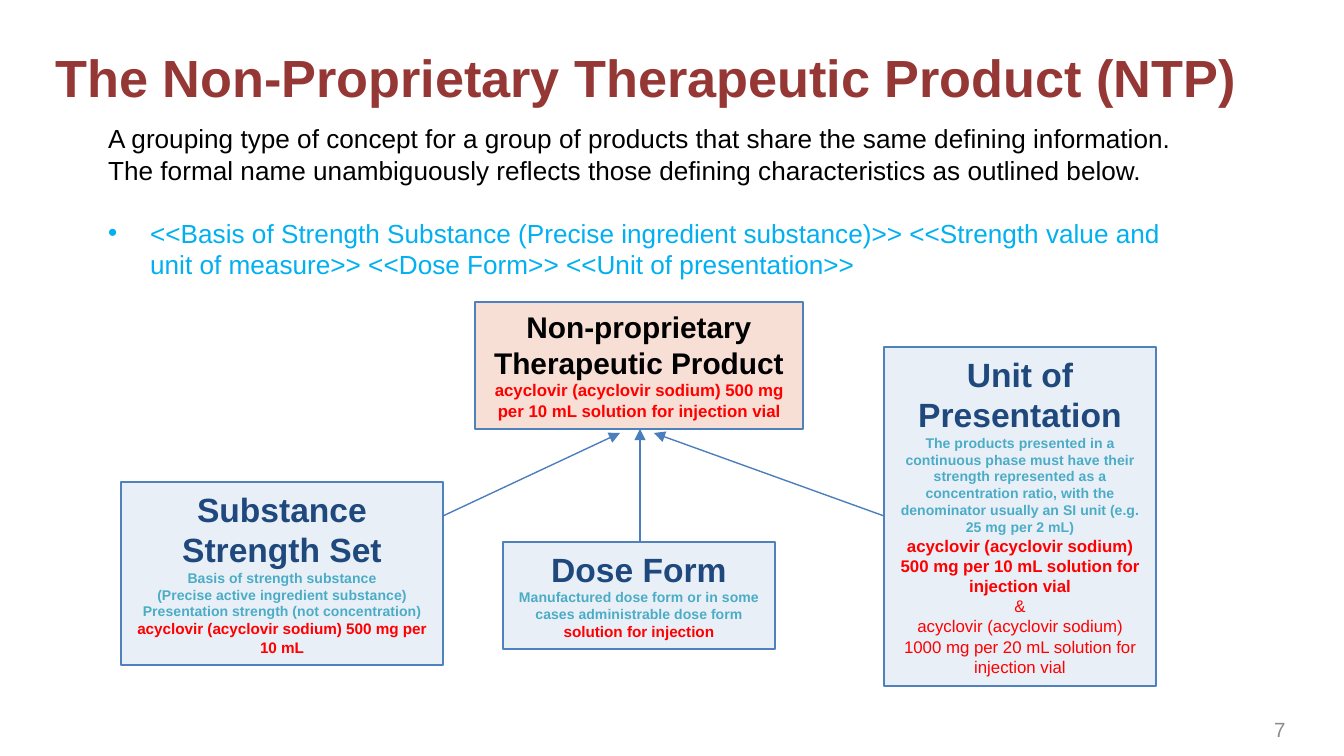
from lxml import etree
from pptx import Presentation
from pptx.dml.color import RGBColor
from pptx.enum.shapes import MSO_CONNECTOR as CONN, MSO_SHAPE as SHAPE
from pptx.enum.text import MSO_ANCHOR as ANCHOR, MSO_AUTO_SIZE as AUTO, PP_ALIGN as ALIGN
from pptx.oxml.ns import qn
from pptx.util import Emu, Pt

PX = 914400 / 134.4
BLACK = RGBColor(0x00, 0x00, 0x00)
MAROON = RGBColor(0x95, 0x37, 0x35)
GRAY = RGBColor(0x8C, 0x8C, 0x8C)
CYAN = RGBColor(0x00, 0xB0, 0xF0)
RED = RGBColor(0xFF, 0x00, 0x00)
NAVY = RGBColor(0x1F, 0x49, 0x7D)
TEAL = RGBColor(0x4B, 0xAC, 0xC6)
PEACH = RGBColor(0xE9, 0x98, 0x77)
PALE = RGBColor(0xB9, 0xCD, 0xE5)
EDGE = RGBColor(0x4F, 0x81, 0xBD)
ARROW = RGBColor(0x4B, 0x7E, 0xBC)


def px(*values):
    return [Emu(round(v * PX)) for v in values]


def write(tf, lines, align=ALIGN.LEFT):
    tf.word_wrap = True
    for i, (text, size, color, bold) in enumerate(lines):
        p = tf.paragraphs[0] if i == 0 else tf.add_paragraph()
        p.alignment = align
        r = p.add_run()
        r.text = text
        fmt = {"name": "Arial", "size": Pt(size), "bold": bold}
        for key, value in fmt.items():
            setattr(r.font, key, value)
        r.font.color.rgb = color


prs = Presentation()
prs.slide_width, prs.slide_height = px(1344, 756)
s = prs.slides.add_slide(prs.slide_layouts[5])

title = s.shapes.title
title.left, title.top, title.width, title.height = px(42, 30, 1262, 85)
tf = title.text_frame
tf.auto_size = AUTO.NONE
tf.vertical_anchor = ANCHOR.BOTTOM
write(tf, [("The Non-Proprietary Therapeutic Product (NTP)", 28, MAROON, True)])

tf = s.shapes.add_textbox(*px(1261, 709, 83, 40)).text_frame
tf.vertical_anchor = ANCHOR.MIDDLE
write(tf, [("7", 11, GRAY, False)])

tf = s.shapes.add_textbox(*px(95, 116, 1101, 172)).text_frame
write(tf, [
    ("A grouping type of concept for a group of products that share the same defining "
     "information. The formal name unambiguously reflects those defining characteristics "
     "as outlined below.", 14, BLACK, False),
    ("<<Basis of Strength Substance (Precise ingredient substance)>> <<Strength value and "
     "unit of measure>> <<Dose Form>> <<Unit of presentation>>", 14, CYAN, False),
])
p = tf.paragraphs[1]
p.space_before = Pt(17)
pPr = p._p.get_or_add_pPr()
indent = px(42)[0]
pPr.set("marL", str(indent))
pPr.set("indent", str(-indent))
etree.SubElement(pPr, qn("a:buFont")).set("typeface", "Arial")
etree.SubElement(pPr, qn("a:buChar")).set("char", "•")

boxes = [
    ((475, 302, 328, 127), PEACH, [
        ("Non-proprietary Therapeutic Product", 16, BLACK, True),
        ("acyclovir (acyclovir sodium) 500 mg per 10 mL solution for injection vial",
         9, RED, True),
    ]),
    ((121, 482, 322, 183), PALE, [
        ("Substance Strength Set", 18, NAVY, True),
        ("Basis of strength substance", 7.5, TEAL, True),
        ("(Precise active ingredient substance)", 7.5, TEAL, True),
        ("Presentation strength (not concentration)", 7.5, TEAL, True),
        ("acyclovir (acyclovir sodium) 500 mg per 10 mL", 8.2, RED, True),
    ]),
    ((503, 542, 272, 107), PALE, [
        ("Dose Form", 18, NAVY, True),
        ("Manufactured dose form or in some cases administrable dose form",
         7.5, TEAL, True),
        ("solution for injection", 8.2, RED, True),
    ]),
    ((884, 347, 272, 339), PALE, [
        ("Unit of Presentation", 18, NAVY, True),
        ("The products presented in a continuous phase must have their strength "
         "represented as a concentration ratio, with the denominator usually an SI unit "
         "(e.g. 25 mg per 2 mL)", 7.5, TEAL, True),
        ("acyclovir (acyclovir sodium) 500 mg per 10 mL solution for injection vial",
         9, RED, True),
        ("&", 9, RED, False),
        ("acyclovir (acyclovir sodium) 1000 mg per 20 mL solution for injection vial",
         9, RED, False),
    ]),
]
for place, fill, lines in boxes:
    sp = s.shapes.add_shape(SHAPE.RECTANGLE, *px(*place))
    sp.shadow.inherit = False
    sp.fill.solid()
    sp.fill.fore_color.rgb = fill
    clr = sp._element.spPr.find(qn("a:solidFill"))[0]
    etree.SubElement(clr, qn("a:alpha")).set("val", "30000")
    sp.line.color.rgb = EDGE
    sp.line.width = Pt(0.75)
    tf = sp.text_frame
    tf.vertical_anchor = ANCHOR.TOP
    write(tf, lines, ALIGN.CENTER)

for ends in [(640, 542, 640, 429), (884, 516, 654, 433), (443, 516, 620, 433)]:
    line = s.shapes.add_connector(CONN.STRAIGHT, *px(*ends))
    line.line.color.rgb = ARROW
    line.line.width = Pt(0.75)
    etree.SubElement(line.line._get_or_add_ln(), qn("a:tailEnd")).set("type", "triangle")
    etree.SubElement(line._element.spPr, qn("a:effectLst"))

prs.save("out.pptx")
